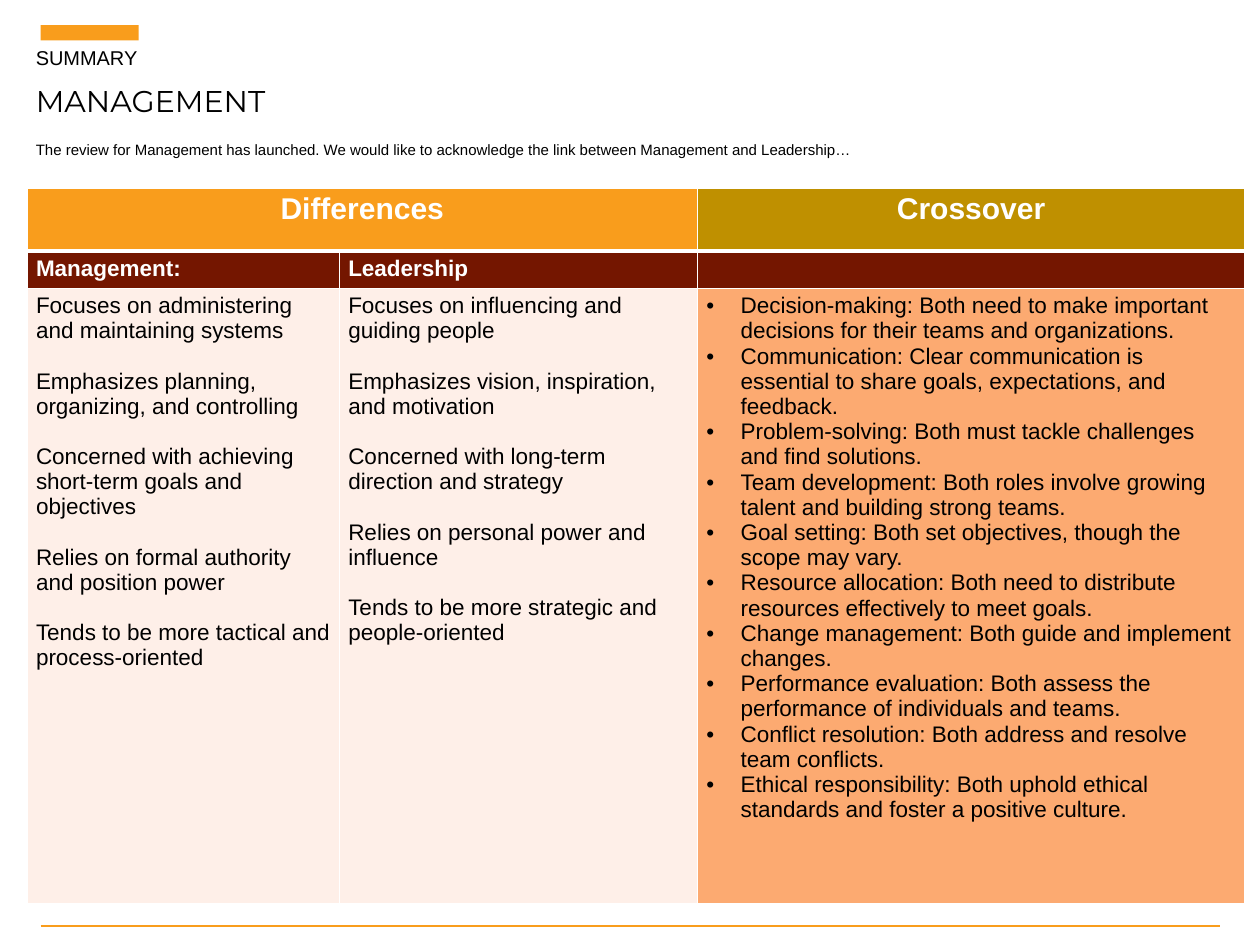
import pptx
import pptx.util
import pptx.dml.color
import pptx.enum.shapes
import pptx.enum.text
import pptx.oxml.ns
from lxml import etree

Inches = pptx.util.Inches
Pt = pptx.util.Pt
ALIGN = pptx.enum.text.PP_ALIGN

ORANGE, GOLD, MAROON = "F99D1C", "BF9000", "741600"
CREAM, PEACH = "FEEFE8", "FCAA71"
BLACK, WHITE = "000000", "FFFFFF"

MANAGE = [
    "Focuses on administering and maintaining systems",
    "Emphasizes planning, organizing, and controlling",
    "Concerned with achieving short-term goals and objectives",
    "Relies on formal authority and position power",
    "Tends to be more tactical and process-oriented",
]
LEAD = [
    "Focuses on influencing and guiding people",
    "Emphasizes vision, inspiration, and motivation",
    "Concerned with long-term direction and strategy",
    "Relies on personal power and influence",
    "Tends to be more strategic and people-oriented",
]
SHARED = [
    "Decision-making: Both need to make important decisions for their teams and organizations.",
    "Communication: Clear communication is essential to share goals, expectations, and feedback.",
    "Problem-solving: Both must tackle challenges and find solutions.",
    "Team development: Both roles involve growing talent and building strong teams.",
    "Goal setting: Both set objectives, though the scope may vary.",
    "Resource allocation: Both need to distribute resources effectively to meet goals.",
    "Change management: Both guide and implement changes.",
    "Performance evaluation: Both assess the performance of individuals and teams.",
    "Conflict resolution: Both address and resolve team conflicts.",
    "Ethical responsibility: Both uphold ethical standards and foster a positive culture.",
]


def rgb(code):
    return pptx.dml.color.RGBColor.from_string(code)


def sub(node, tag, **attrs):
    return etree.SubElement(node, pptx.oxml.ns.qn(tag), **attrs)


class Page:
    """Style and current slide."""
    face = "Arial"
    body = 18

    def __init__(self, deck):
        self.slide = deck.slides.add_slide(deck.slide_layouts[6])
        self.shapes = self.slide.shapes

    def style(self, para, size, color=BLACK, bold=False, face=None):
        for run in para.runs:
            run.font.name = face or self.face
            run.font.size = Pt(size)
            run.font.bold = bold
            run.font.color.rgb = rgb(color)

    def bar(self, left, top, width, height, color):
        kind = pptx.enum.shapes.MSO_SHAPE.RECTANGLE
        box = self.shapes.add_shape(
            kind, Inches(left), Inches(top), Inches(width), Inches(height))
        box.shadow.inherit = False
        box.fill.solid()
        box.fill.fore_color.rgb = rgb(color)
        box.line.fill.background()

    def rule(self, left, right, top, color, width):
        kind = pptx.enum.shapes.MSO_CONNECTOR.STRAIGHT
        line = self.shapes.add_connector(
            kind, Inches(left), Inches(top), Inches(right), Inches(top))
        line.line.color.rgb = rgb(color)
        line.line.width = Pt(width)
        sub(line._element.spPr, "a:effectLst")

    def text(self, left, top, width, height, rows):
        """Add a box; each row is text, size, face and space after."""
        box = self.shapes.add_textbox(
            Inches(left), Inches(top), Inches(width), Inches(height))
        frame = box.text_frame
        frame.word_wrap = True
        frame.auto_size = pptx.enum.text.MSO_AUTO_SIZE.SHAPE_TO_FIT_TEXT
        frame.text = "\n".join(row[0] for row in rows)
        for para, (_, size, face, after) in zip(frame.paragraphs, rows):
            self.style(para, size, face=face)
            para.space_after = Pt(after)

    def table(self, left, top, cols, rows):
        frame = self.shapes.add_table(
            len(rows), len(cols), Inches(left), Inches(top),
            Inches(sum(cols)), Inches(sum(rows)))
        grid = frame.table
        for col, width in zip(grid.columns, cols):
            col.width = Inches(width)
        for row, height in zip(grid.rows, rows):
            row.height = Inches(height)
        return grid

    def cell(self, cell, fill, lines=(), size=body, color=BLACK, bold=False,
             align=ALIGN.LEFT, gap=0, bullet=False, base=1):
        """Fill one cell; base is the width of its bottom border."""
        props = cell._tc.get_or_add_tcPr()
        for side, width in zip("LRTB", (1, 1, 1, base)):
            edge = sub(props, "a:ln" + side, w=str(Pt(width)))
            sub(sub(edge, "a:solidFill"), "a:srgbClr", val=WHITE)
        cell.fill.solid()
        cell.fill.fore_color.rgb = rgb(fill)
        cell.text_frame.text = "\n".join(lines)
        paras = cell.text_frame.paragraphs
        for para in paras:
            para.alignment = align
            if bullet:
                self.bullet(para)
            if para is not paras[-1]:
                para.space_after = Pt(gap)
            self.style(para, size, color, bold)

    def bullet(self, para):
        props = para._p.get_or_add_pPr()
        props.set("marL", str(Inches(0.38)))
        props.set("indent", str(-Inches(0.38)))
        sub(props, "a:buFont", typeface=self.face)
        sub(props, "a:buChar", char="•")


def main():
    deck = pptx.Presentation()
    deck.slide_width, deck.slide_height = Inches(14), Inches(10.5)
    page = Page(deck)

    page.rule(0.45, 13.55, 10.29, ORANGE, 2.25)
    page.bar(0.45, 0.28, 1.09, 0.17, ORANGE)
    page.text(0.3, 0.46, 10.2, 1.35, [
        ("SUMMARY", 16, "Arial", 10),
        ("MANAGEMENT", 24, "Montserrat", 18),
        ("The review for Management has launched. We would like to "
         "acknowledge the link between Management and Leadership…",
         12, "Arial", 0),
    ])

    grid = page.table(0.3, 2.09, [3.47, 3.98, 6.08], [0.7, 0.42, 6.83])
    grid.cell(0, 0).merge(grid.cell(0, 1))
    for col, name, fill in ((0, "Differences", ORANGE), (2, "Crossover", GOLD)):
        page.cell(grid.cell(0, col), fill, [name], 24, WHITE, True,
                  ALIGN.CENTER, base=3)
    for col, name in enumerate(("Management:", "Leadership", "")):
        page.cell(grid.cell(1, col), MAROON, [name], color=WHITE, bold=True)
    for col, lines in enumerate((MANAGE, LEAD)):
        page.cell(grid.cell(2, col), CREAM, lines, gap=20)
    page.cell(grid.cell(2, 2), PEACH, SHARED, bullet=True)

    deck.save("out.pptx")


if __name__ == "__main__":
    main()
